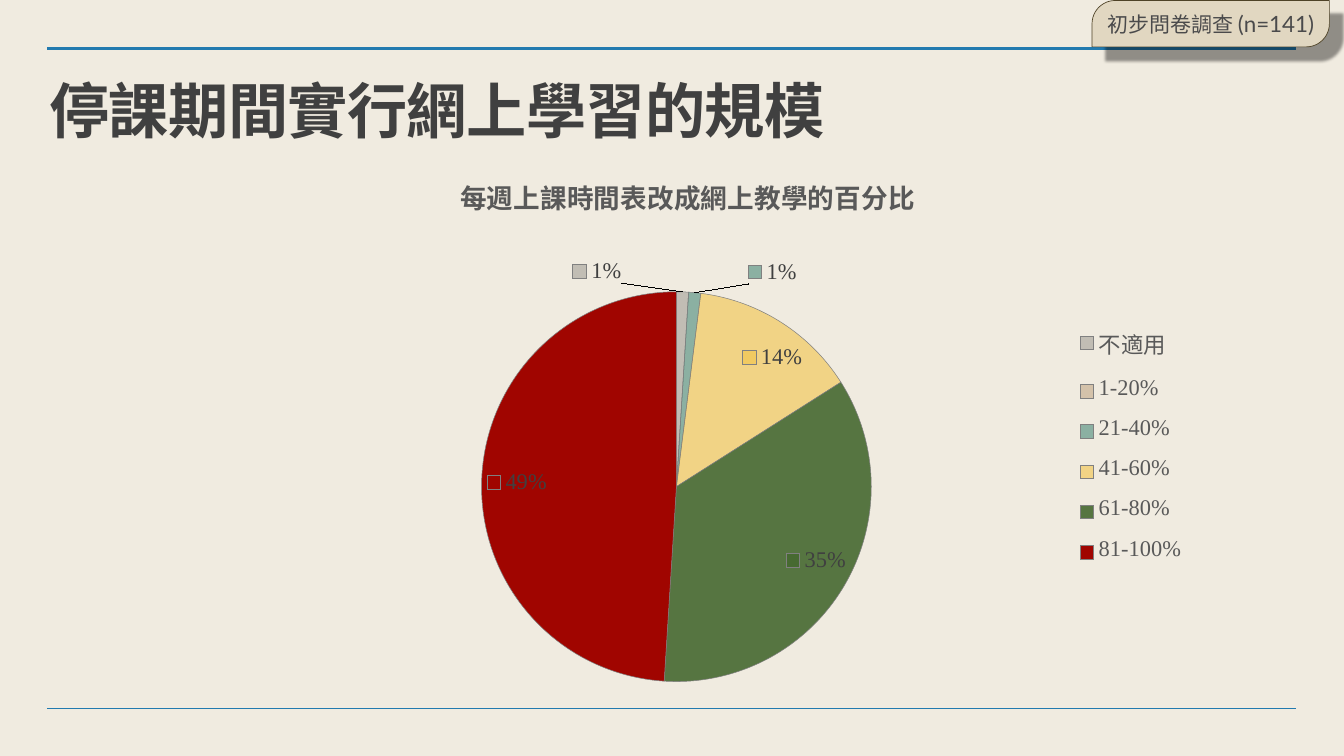
from lxml import etree
from pptx import Presentation
from pptx.chart.data import CategoryChartData
from pptx.dml.color import RGBColor
from pptx.enum.chart import XL_CHART_TYPE, XL_LABEL_POSITION, XL_LEGEND_POSITION
from pptx.enum.shapes import MSO_CONNECTOR, MSO_SHAPE
from pptx.enum.text import MSO_ANCHOR, PP_ALIGN
from pptx.oxml import parse_xml
from pptx.oxml.ns import nsdecls, qn
from pptx.util import Inches, Pt

COLORS = {
    "background": "F0EBE0", "rule": "227AAF", "title": "404040",
    "badge": "E1D7C1", "badge_line": "4E4226", "badge_text": "4A4A4B",
    "chart_text": "595959", "label": "404040", "slice_line": "808080",
}
# Category, percentage, slice colour, opacity in percent
SLICES = [
    ("不適用", 1, "252525", 23),
    ("1-20%", 0, "7F4300", 24),
    ("21-40%", 1, "277765", 50),
    ("41-60%", 14, "F2C449", 60),
    ("61-80%", 35, "466930", 90),
    ("81-100%", 49, "A00500", 100),
]
# Shifts of the crowded labels, as fractions of the chart
LABEL_SHIFTS = {0: (-0.08, -0.01), 2: (0.05, -0.01)}


def rgb(name):
    return RGBColor.from_string(COLORS[name])


def style_font(font, size, color, name, bold=False):
    font.size, font.name, font.bold = Pt(size), name, bold
    font.color.rgb = rgb(color)


def set_insets(tf, inset=0.06):
    tf.margin_left = tf.margin_right = Inches(inset)
    tf.margin_top = tf.margin_bottom = Inches(inset)


def layout_xml(x, y, w=None, h=None, inner=False):
    """Manual chart layout; without a size, x and y are shifts."""
    parts = ['<c:layoutTarget val="inner"/>'] if inner else []
    if w:
        parts.append('<c:xMode val="edge"/><c:yMode val="edge"/>')
    parts.append(f'<c:x val="{x}"/><c:y val="{y}"/>')
    if w:
        parts.append(f'<c:w val="{w}"/><c:h val="{h}"/>')
    return parse_xml(f'<c:layout {nsdecls("c")}><c:manualLayout>{"".join(parts)}'
                     '</c:manualLayout></c:layout>')


def add_rule(slide, x, y, width, weight):
    line = slide.shapes.add_connector(
        MSO_CONNECTOR.STRAIGHT, Inches(x), Inches(y), Inches(x + width), Inches(y))
    line.line.color.rgb = rgb("rule")
    line.line.width = Pt(weight)
    etree.SubElement(line._element.spPr, qn("a:effectLst"))


def add_title(slide, x, y, w, h):
    box = slide.shapes.add_textbox(Inches(x), Inches(y), Inches(w), Inches(h))
    tf = box.text_frame
    tf.word_wrap = True
    set_insets(tf)
    p = tf.paragraphs[0]
    p.text = "停課期間實行網上學習的規模"
    p.line_spacing = 0.8
    r = p.runs[0]
    style_font(r.font, 86, "title", "Arial", True)
    r._r.get_or_add_rPr().set("spc", "-90")


def add_badge(slide, x, y, w, h):
    sp = slide.shapes.add_shape(
        MSO_SHAPE.ROUND_2_DIAG_RECTANGLE, Inches(x), Inches(y), Inches(w), Inches(h))
    sp.adjustments[0], sp.adjustments[1] = 0.5, 0
    sp.fill.solid()
    sp.fill.fore_color.rgb = rgb("badge")
    sp.line.color.rgb = rgb("badge_line")
    sp.line.width = Pt(1)
    # Offset shadow
    sp._element.spPr.append(parse_xml(
        f'<a:effectLst {nsdecls("a")}>'
        f'<a:outerShdw blurRad="{Pt(4)}" dist="{Pt(27)}" dir="2700000" algn="tl" '
        'rotWithShape="0"><a:srgbClr val="000000"><a:alpha val="40000"/></a:srgbClr>'
        '</a:outerShdw></a:effectLst>'))
    tf = sp.text_frame
    tf.word_wrap = True
    tf.vertical_anchor = MSO_ANCHOR.MIDDLE
    set_insets(tf)
    p = tf.paragraphs[0]
    p.alignment = PP_ALIGN.CENTER
    for text, size in (("初步問卷調查 ", 30), ("(n=141)", 32)):
        r = p.add_run()
        r.text = text
        style_font(r.font, size, "badge_text", "Lato")


def style_slices(series):
    for i, (_, _, color, opacity) in enumerate(SLICES):
        fmt = series.points[i].format
        fmt.fill.solid()
        fmt.fill.fore_color.rgb = RGBColor.from_string(color)
        if opacity < 100:
            clr = fmt.fill._xPr.find(qn("a:solidFill"))[0]
            etree.SubElement(clr, qn("a:alpha")).set("val", str(opacity * 1000))
        fmt.line.color.rgb = rgb("slice_line")
        fmt.line.width = Pt(0.75)


def style_labels(series):
    labels = series.data_labels
    labels.show_value = False
    labels.show_percentage = True
    labels.show_legend_key = True
    labels.number_format = "0%"
    labels.number_format_is_linked = False
    labels.position = XL_LABEL_POSITION.BEST_FIT
    style_font(labels.font, 32, "label", "Times New Roman")
    d_lbls = labels._element
    d_lbls.find(qn("c:showLeaderLines")).set("val", "1")
    # Empty slices have no label, crowded ones are moved apart
    at = 0
    for i, (_, value, _, _) in enumerate(SLICES):
        if value and i not in LABEL_SHIFTS:
            continue
        lbl = parse_xml(f'<c:dLbl {nsdecls("c")}><c:idx val="{i}"/></c:dLbl>')
        if not value:
            etree.SubElement(lbl, qn("c:delete")).set("val", "1")
        else:
            lbl.append(layout_xml(*LABEL_SHIFTS[i]))
            flags = (("dLblPos", "bestFit"), ("showLegendKey", "1"), ("showVal", "0"),
                     ("showCatName", "0"), ("showSerName", "0"),
                     ("showPercent", "1"), ("showBubbleSize", "0"))
            for tag, val in flags:
                etree.SubElement(lbl, qn(f"c:{tag}")).set("val", val)
        d_lbls.insert(at, lbl)
        at += 1


def add_pie(slide, x, y, w, h):
    data = CategoryChartData()
    data.categories = [s[0] for s in SLICES]
    data.add_series("Series 1", [s[1] for s in SLICES])
    chart = slide.shapes.add_chart(
        XL_CHART_TYPE.PIE, Inches(x), Inches(y), Inches(w), Inches(h), data).chart
    style_font(chart.font, 32, "chart_text", "Times New Roman")

    # Chart title
    chart.has_title = True
    tf = chart.chart_title.text_frame
    tf.text = "每週上課時間表改成網上教學的百分比"
    style_font(tf.paragraphs[0].runs[0].font, 38, "chart_text", "Arial", True)
    chart.chart_title.include_in_layout = False

    # Plot area
    plot = chart.plots[0]
    plot.vary_by_categories = True
    area = chart._chartSpace.chart.plotArea
    for old in area.findall(qn("c:layout")):
        area.remove(old)
    area.insert(0, layout_xml(0.255, 0.236, 0.469, 0.676, inner=True))
    style_slices(plot.series[0])
    style_labels(plot.series[0])

    # Legend
    chart.has_legend = True
    legend = chart.legend
    legend.position = XL_LEGEND_POSITION.RIGHT
    legend.include_in_layout = False
    style_font(legend.font, 32, "chart_text", "Times New Roman")
    for old in legend._element.findall(qn("c:layout")):
        legend._element.remove(old)
    legend._element.find(qn("c:legendPos")).addnext(layout_xml(0.85, 0.27, 0.13, 0.46))


def main():
    prs = Presentation()
    prs.slide_width, prs.slide_height = Inches(26.67), Inches(15)
    slide = prs.slides.add_slide(prs.slide_layouts[6])
    slide.background.fill.solid()
    slide.background.fill.fore_color.rgb = rgb("background")
    for y, weight in ((0.97, 4), (14.06, 1)):
        add_rule(slide, 0.94, y, 24.78, weight)
    add_pie(slide, 3.05, 3.09, 21.19, 11.44)
    add_title(slide, 0.92, 1.68, 22.89, 3.53)
    add_badge(slide, 21.67, 0.01, 4.71, 0.92)
    prs.save("out.pptx")


if __name__ == "__main__":
    main()
